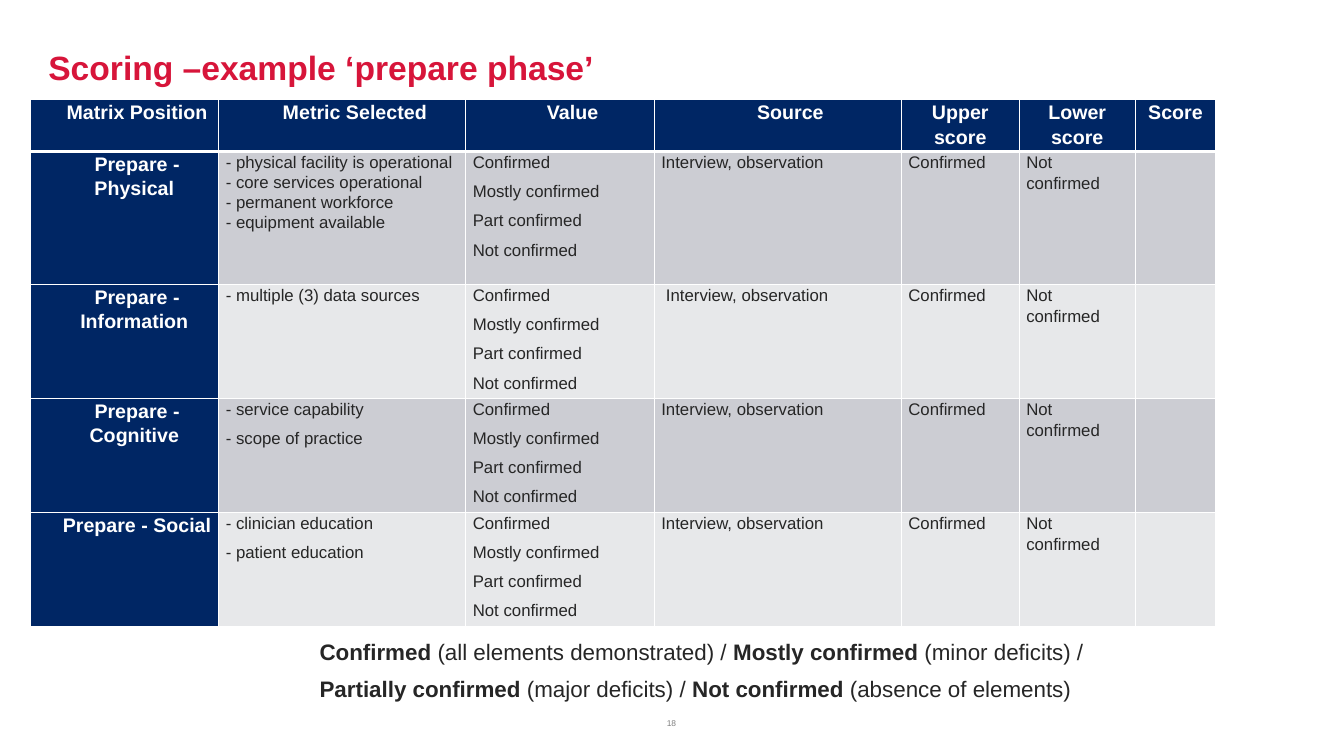
import pptx
import pptx.util
import pptx.dml.color
import pptx.enum.text
import pptx.oxml
import pptx.oxml.ns

Inches, Pt = pptx.util.Inches, pptx.util.Pt
ALIGN = pptx.enum.text.PP_ALIGN
ANCHOR = pptx.enum.text.MSO_ANCHOR

# Content
TITLE = "Scoring –example ‘prepare phase’"
NUMBER = "18"
HEADS = ["Matrix Position", "Metric Selected", "Value", "Source",
         "Upper score", "Lower score", "Score"]
VALUES = ["Confirmed", "Mostly confirmed", "Part confirmed", "Not confirmed"]
SOURCE = "Interview, observation"
PHASES = [
    ("Prepare - Physical ", ["- physical facility is operational",
                             "- core services operational",
                             "- permanent workforce",
                             "- equipment available"], SOURCE),
    ("Prepare - Information ", ["- multiple (3) data sources"], " " + SOURCE),
    ("Prepare - Cognitive ", ["- service capability", "- scope of practice"], SOURCE),
    ("Prepare - Social ", ["- clinician education", "- patient education"], SOURCE),
]
LEGEND = [
    [("Confirmed", True), (" (all elements demonstrated) / ", False),
     ("Mostly confirmed ", True), ("(minor deficits) /", False)],
    [("Partially confirmed", True), (" (major deficits) / ", False),
     ("Not confirmed ", True), ("(absence of elements)", False)],
]
WIDTHS = [1.87, 2.45, 1.87, 2.45, 1.17, 1.15, 0.8]
HEIGHTS = [0.47, 1.32, 1.12, 1.12, 1.12]

THEME = {
    "font": "Arial", "red": "D7153A", "navy": "002664", "ink": "262626",
    "grey": "7F7F7F", "white": "FFFFFF", "bands": ["CCCDD3", "E7E8EA"],
    "title": 24, "legend": 16, "head": 14, "body": 12, "number": 6,
}


def color(name):
    return pptx.dml.color.RGBColor.from_string(name)


def write(frame, paras, size, ink, bold=False, align=ALIGN.LEFT,
          line=1.0, before=0, after=0, indent=0):
    """Each paragraph is a string or a list of (text, bold) runs."""
    for i, para in enumerate(paras):
        p = frame.paragraphs[0] if i == 0 else frame.add_paragraph()
        p.alignment, p.line_spacing = align, line
        p.space_before, p.space_after = Pt(before if i else 0), Pt(after)
        if indent:
            props = p._p.get_or_add_pPr()
            props.set("marL", str(Inches(indent)))
            props.set("indent", "0")
        runs = [(para, bold)] if isinstance(para, str) else para
        for text, heavy in runs:
            run = p.add_run()
            run.text = text
            font = run.font
            font.name, font.size, font.bold = THEME["font"], Pt(size), heavy
            font.color.rgb = color(ink)


def box(slide, place, paras, anchor=ANCHOR.TOP, **style):
    frame = slide.shapes.add_textbox(*map(Inches, place)).text_frame
    frame.word_wrap = True
    frame.margin_left = frame.margin_right = 0
    frame.margin_top = frame.margin_bottom = 0
    frame.vertical_anchor = anchor
    write(frame, paras, **style)


def dress(cell, fill, row):
    cell.margin_left = cell.margin_right = Inches(0.07)
    cell.margin_top = cell.margin_bottom = 0
    thick = {"B": 3} if row == 0 else {"T": 3} if row == 1 else {}
    props = cell._tc.get_or_add_tcPr()
    for side in "LRTB":
        props.append(pptx.oxml.parse_xml(
            f'<a:ln{side} {pptx.oxml.ns.nsdecls("a")} w="{Pt(thick.get(side, 1))}">'
            f'<a:solidFill><a:srgbClr val="{THEME["white"]}"/></a:solidFill>'
            f'</a:ln{side}>'))
    cell.fill.solid()
    cell.fill.fore_color.rgb = color(fill)


def matrix(slide):
    grid = slide.shapes.add_table(
        len(HEIGHTS), len(WIDTHS), Inches(0.3), Inches(0.99),
        Inches(sum(WIDTHS)), Inches(sum(HEIGHTS))).table
    grid.first_row = grid.horz_banding = False
    for col, width in zip(grid.columns, WIDTHS):
        col.width = Inches(width)
    for row, height in zip(grid.rows, HEIGHTS):
        row.height = Inches(height)

    rows = [[[head] for head in HEADS]]
    for name, metrics, source in PHASES:
        rows.append([[name], metrics, VALUES, [source], VALUES[:1], VALUES[-1:], []])

    for r, row in enumerate(rows):
        for c, paras in enumerate(row):
            cell = grid.cell(r, c)
            head = r == 0 or c == 0
            dress(cell, THEME["navy"] if head else THEME["bands"][(r - 1) % 2], r)
            if head:
                style = dict(size=THEME["head"], ink=THEME["white"], bold=True,
                             align=ALIGN.CENTER, indent=0.25 if c < 4 else 0)
            else:
                style = dict(size=THEME["body"], ink=THEME["ink"])
            # The long metric list is set tight
            tight = c == 1 and len(paras) > 2
            write(cell.text_frame, paras, line=1.07 if tight else 1.1,
                  after=0 if tight else 6, **style)


def main():
    deck = pptx.Presentation()
    deck.slide_width, deck.slide_height = Inches(13.33), Inches(7.5)
    slide = deck.slides.add_slide(deck.slide_layouts[6])

    # Slide number and title
    box(slide, (5.74, 6.92, 1.84, 0.3), [NUMBER], ANCHOR.BOTTOM,
        size=THEME["number"], ink=THEME["grey"], align=ALIGN.CENTER)
    box(slide, (0.48, 0.4, 12.36, 0.59), [TITLE], ANCHOR.MIDDLE,
        size=THEME["title"], ink=THEME["red"], bold=True, line=0.9)

    # Scoring table and legend
    matrix(slide)
    box(slide, (3.17, 6.33, 8, 0.59), LEGEND,
        size=THEME["legend"], ink=THEME["ink"], before=7)

    deck.save("out.pptx")


if __name__ == "__main__":
    main()
